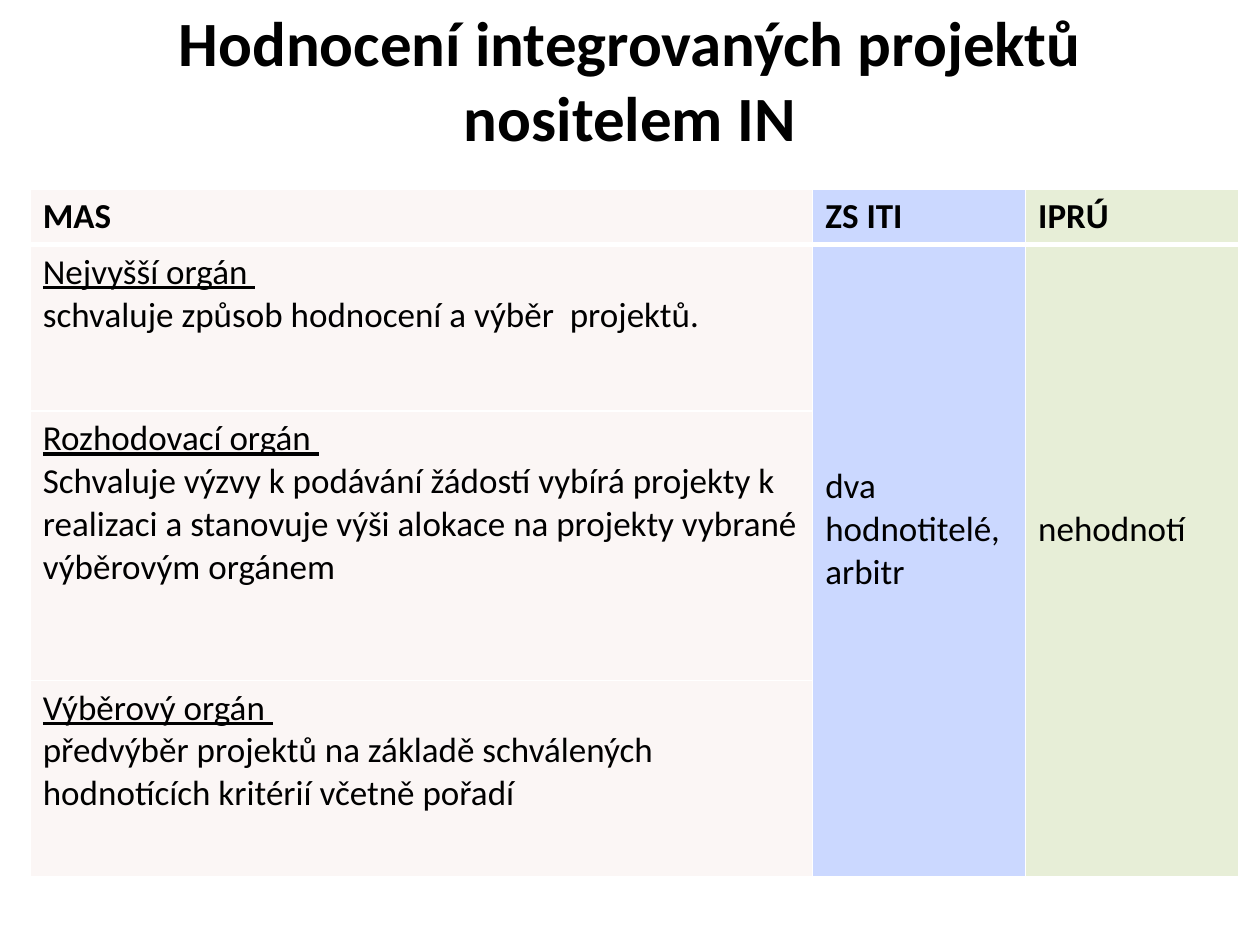
from lxml.etree import SubElement
from pptx import Presentation
from pptx.dml.color import RGBColor
from pptx.enum.text import MSO_ANCHOR, PP_ALIGN
from pptx.oxml import parse_xml
from pptx.oxml.ns import nsdecls, qn
from pptx.util import Inches, Pt

COLORS = {
    "text": "000000",
    "border": "FFFFFF",
    "mas": "F2DCDB",
    "iti": "3366FF",
    "ipru": "9BBB59",
}
FONT = "Calibri"
COLUMN_WIDTHS = [6.21, 1.69, 1.69]
ROW_HEIGHTS = [0.43, 1.32, 2.14, 1.56]
COLUMN_FILLS = [("mas", 25), ("iti", 25), ("ipru", 24)]  # colour, opacity in %
HEADERS = ["MAS", "ZS ITI", "IPRÚ"]
BODIES = [
    ("Nejvyšší orgán ", "schvaluje způsob hodnocení a výběr  projektů."),
    ("Rozhodovací orgán ",
     "Schvaluje výzvy k podávání žádostí vybírá projekty k realizaci "
     "a stanovuje výši alokace na projekty vybrané výběrovým orgánem"),
    ("Výběrový orgán ",
     "předvýběr projektů na základě schválených hodnotících kritérií "
     "včetně pořadí"),
]


def add_run(paragraph, text, size=20, bold=False, underline=False):
    run = paragraph.add_run()
    run.text = text
    run.font.name = FONT
    run.font.size = Pt(size)
    run.font.bold = bold
    run.font.underline = underline
    run.font.color.rgb = RGBColor.from_string(COLORS["text"])


def add_title(slide, text):
    title = slide.shapes.title
    title.left, title.top = Inches(0.5), Inches(0)
    title.width, title.height = Inches(9), Inches(1.25)
    title.text_frame.vertical_anchor = MSO_ANCHOR.MIDDLE
    paragraph = title.text_frame.paragraphs[0]
    paragraph.alignment = PP_ALIGN.CENTER
    add_run(paragraph, text, size=36, bold=True)


def fill_cell(cell, color, opacity):
    cell.fill.solid()
    cell.fill.fore_color.rgb = RGBColor.from_string(COLORS[color])
    color_element = cell._tc.tcPr.find(qn("a:solidFill"))[0]
    SubElement(color_element, qn("a:alpha"), val=str(opacity * 1000))


def set_borders(cell, top=1, bottom=1):
    # Border lines must stand before the fill
    widths = {"lnL": 1, "lnR": 1, "lnT": top, "lnB": bottom}
    for index, (side, width) in enumerate(widths.items()):
        line = parse_xml(
            f'<a:{side} {nsdecls("a")} w="{Pt(width)}"><a:solidFill>'
            f'<a:srgbClr val="{COLORS["border"]}"/></a:solidFill></a:{side}>')
        cell._tc.tcPr.insert(index, line)


def add_table(slide):
    frame = slide.shapes.add_table(
        len(ROW_HEIGHTS), len(COLUMN_WIDTHS), Inches(0.24), Inches(1.5),
        Inches(sum(COLUMN_WIDTHS)), Inches(sum(ROW_HEIGHTS)))
    table = frame.table
    table.horz_banding = False
    for column, width in zip(table.columns, COLUMN_WIDTHS):
        column.width = Inches(width)
    for row_index, height in enumerate(ROW_HEIGHTS):
        table.rows[row_index].height = Inches(height)
        for column_index, (color, opacity) in enumerate(COLUMN_FILLS):
            cell = table.cell(row_index, column_index)
            fill_cell(cell, color, opacity)
            set_borders(cell, top=3 if row_index == 1 else 1,
                        bottom=3 if row_index == 0 else 1)
    return table


def add_merged_text(table, column_index, lines):
    cell = table.cell(1, column_index)
    cell.merge(table.cell(len(ROW_HEIGHTS) - 1, column_index))
    # The text sits a little above the middle
    cell.vertical_anchor = MSO_ANCHOR.MIDDLE
    cell.margin_bottom = Inches(0.54)
    paragraph = cell.text_frame.paragraphs[0]
    for index, line in enumerate(lines):
        if index:
            paragraph.add_line_break()
        add_run(paragraph, line)


def main():
    presentation = Presentation()
    presentation.slide_width = Inches(10)
    presentation.slide_height = Inches(7.5)
    slide = presentation.slides.add_slide(presentation.slide_layouts[5])

    add_title(slide, "Hodnocení integrovaných projektů nositelem IN")
    table = add_table(slide)

    # Header row
    for column_index, header in enumerate(HEADERS):
        cell = table.cell(0, column_index)
        add_run(cell.text_frame.paragraphs[0], header, bold=True)

    # Bodies of the local action group
    for row_index, (name, role) in enumerate(BODIES, start=1):
        text_frame = table.cell(row_index, 0).text_frame
        add_run(text_frame.paragraphs[0], name, underline=True)
        add_run(text_frame.add_paragraph(), role)

    # Columns that span all bodies
    add_merged_text(table, 1, ["dva hodnotitelé,", "arbitr"])
    add_merged_text(table, 2, ["nehodnotí"])

    presentation.save("out.pptx")


if __name__ == "__main__":
    main()
